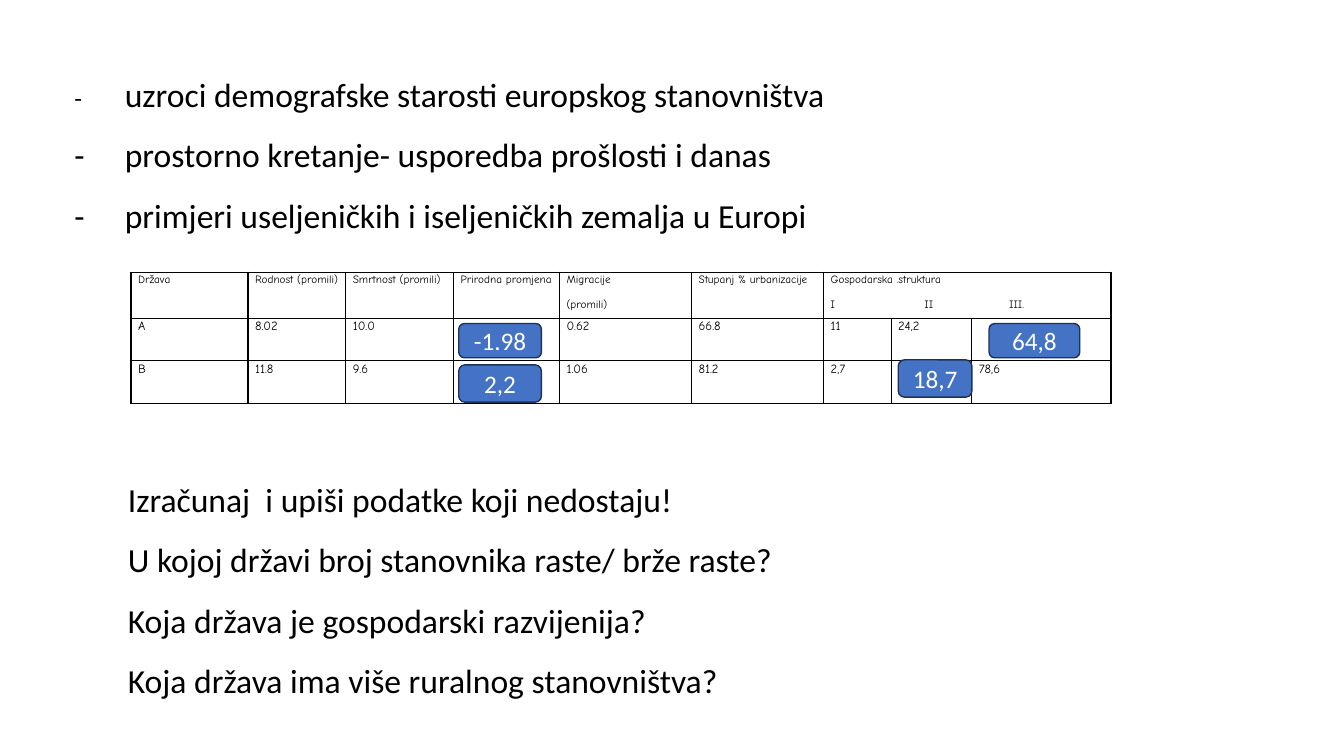
from lxml.etree import SubElement
from pptx import Presentation
from pptx.dml.color import RGBColor as RGB
from pptx.enum.shapes import MSO_SHAPE as SHAPE
from pptx.enum.text import MSO_ANCHOR as ANCHOR, MSO_AUTO_SIZE as AUTOSIZE, PP_ALIGN as ALIGN
from pptx.oxml.ns import qn
from pptx.util import Pt

PX = 9144  # EMU per px, 100 px to the inch
COLORS = {"text": "000000", "border": "000000", "answer": "4472C4",
          "outline": "1E3256", "answer_text": "FFFFFF"}
BODY, TABLE_FONT = "Calibri", "Comic Neue"

TOPICS = ["uzroci demografske starosti europskog stanovništva",
          "prostorno kretanje- usporedba prošlosti i danas",
          "primjeri useljeničkih i iseljeničkih zemalja u Europi"]
QUESTIONS = ["Izračunaj  i upiši podatke koji nedostaju!",
             "U kojoj državi broj stanovnika raste/ brže raste?",
             "Koja država je gospodarski razvijenija?",
             "Koja država ima više ruralnog stanovništva?"]
COLUMNS = [116, 97, 107, 105, 131, 131, 67, 80, 138]
ROWS = [46, 42, 42]
SECTOR_TABS = [93, 177]
DATA = [
    ["Država", "Rodnost (promili)", "Smrtnost (promili)", "Prirodna promjena",
     "Migracije\n(promili)", "Stupanj % urbanizacije",
     "Gospodarska .struktura\nI\tII\tIII.", "", ""],
    ["A", "8.02", "10.0", "", "0.62", "66.8", "11", "24,2", ""],
    ["B", "11.8", "9.6", "", "1.06", "81.2", "2,7", "", "78,6"],
]
# Missing values, placed relative to the table corner
ANSWERS = [("-1.98", (325, 51, 82, 34)), ("2,2", (325, 92, 82, 37)),
           ("64,8", (851, 51, 90, 34)), ("18,7", (761, 87, 73, 37))]


def px(*lengths):
    return [n * PX for n in lengths]


def set_attrs(obj, values):
    for name, value in values.items():
        setattr(obj, name, value)


def add_run(p, text, size, font=BODY, color="text"):
    r = p.add_run()
    r.text = text
    set_attrs(r.font, {"size": Pt(size), "name": font})
    r.font.color.rgb = RGB.from_string(COLORS[color])


def add_lines(tf, lines, spacing):
    """Fill a text frame; each line is a list of (text, size, font) runs."""
    for i, runs in enumerate(lines):
        p = tf.paragraphs[0] if i == 0 else tf.add_paragraph()
        set_attrs(p, spacing)
        for run in runs:
            add_run(p, *run)


def add_text(s, box, lines):
    tf = s.shapes.add_textbox(*px(*box)).text_frame
    set_attrs(tf, {"word_wrap": True, "auto_size": AUTOSIZE.SHAPE_TO_FIT_TEXT})
    add_lines(tf, lines, {"line_spacing": 1.5})


def add_topics(s, box):
    # The first dash is smaller than the others
    add_text(s, box, [[("-\t", 24 if i else 18), (topic, 24)]
                      for i, topic in enumerate(TOPICS)])


def add_questions(s, box):
    add_text(s, box, [[(question, 24)] for question in QUESTIONS])


def style_cell(cell):
    margin = 7 * PX
    set_attrs(cell, {"margin_left": margin, "margin_right": margin,
                     "margin_top": 0, "margin_bottom": 0})
    tcPr = cell._tc.get_or_add_tcPr()
    for side in ("a:lnL", "a:lnR", "a:lnT", "a:lnB"):
        ln = SubElement(tcPr, qn(side), w=str(Pt(1)))
        fill = SubElement(ln, qn("a:solidFill"))
        SubElement(fill, qn("a:srgbClr"), val=COLORS["border"])
    cell.fill.background()


def add_tabs(p, stops):
    tabs = SubElement(p._p.get_or_add_pPr(), qn("a:tabLst"))
    for stop in stops:
        SubElement(tabs, qn("a:tab"), pos=str(stop * PX), algn="l")


def add_country_table(s, box):
    table = s.shapes.add_table(len(ROWS), len(COLUMNS), *px(*box)).table
    set_attrs(table, {"first_row": False, "horz_banding": False})
    for column, width in zip(table.columns, COLUMNS):
        column.width = width * PX
    for row, height in zip(table.rows, ROWS):
        row.height = height * PX
    for i, values in enumerate(DATA):
        for j, value in enumerate(values):
            cell = table.cell(i, j)
            style_cell(cell)
            if value:
                lines = [[(line, 9 if i else 8, TABLE_FONT)] for line in value.split("\n")]
                add_lines(cell.text_frame, lines,
                          {"line_spacing": 1.07, "space_after": Pt(8)})

    # One heading over the three economic sectors
    heading = table.cell(0, 6)
    heading.merge(table.cell(0, 8))
    add_tabs(heading.text_frame.paragraphs[1], SECTOR_TABS)


def add_answers(s, box):
    left, top = box[:2]
    for text, (x, y, w, h) in ANSWERS:
        sp = s.shapes.add_shape(SHAPE.ROUNDED_RECTANGLE, *px(left + x, top + y, w, h))
        sp.shadow.inherit = False
        sp.fill.solid()
        sp.fill.fore_color.rgb = RGB.from_string(COLORS["answer"])
        sp.line.color.rgb = RGB.from_string(COLORS["outline"])
        sp.line.width = Pt(1)
        tf = sp.text_frame
        tf.vertical_anchor = ANCHOR.MIDDLE
        p = tf.paragraphs[0]
        p.alignment = ALIGN.CENTER
        add_run(p, text, 18, color="answer_text")


def main():
    prs = Presentation()
    prs.slide_width, prs.slide_height = px(1333, 750)
    s = prs.slides.add_slide(prs.slide_layouts[6])
    table_box = (130, 270, sum(COLUMNS), sum(ROWS))
    add_topics(s, (64, 48, 1073, 186))
    add_country_table(s, table_box)
    add_questions(s, (117, 450, 787, 246))
    add_answers(s, table_box)
    prs.save("out.pptx")


if __name__ == "__main__":
    main()
